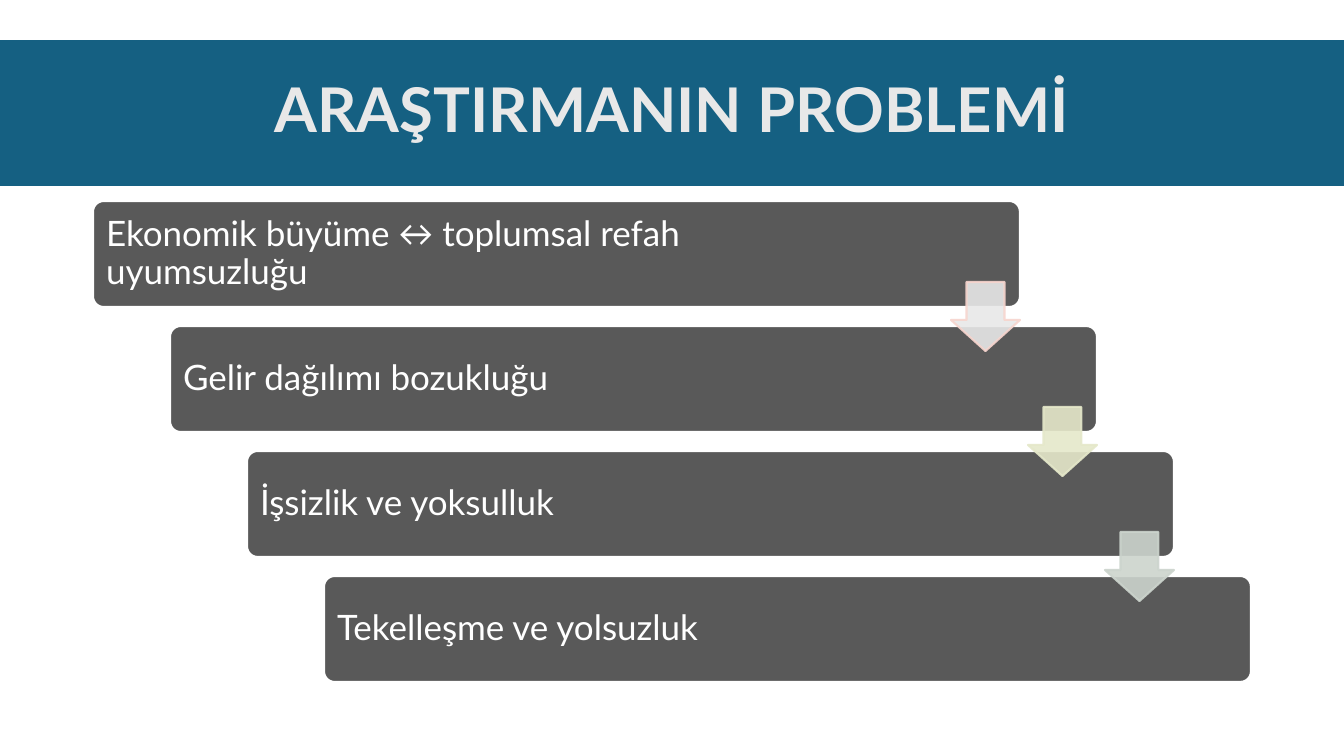
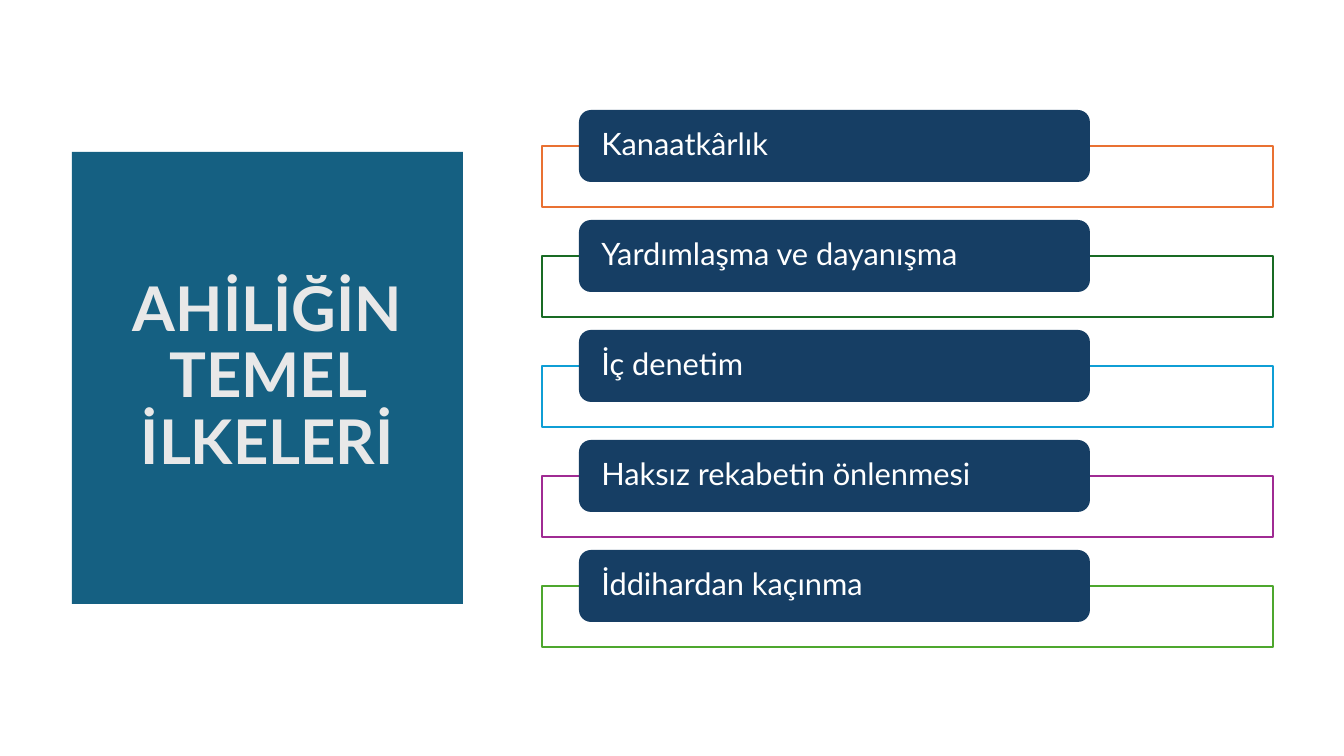
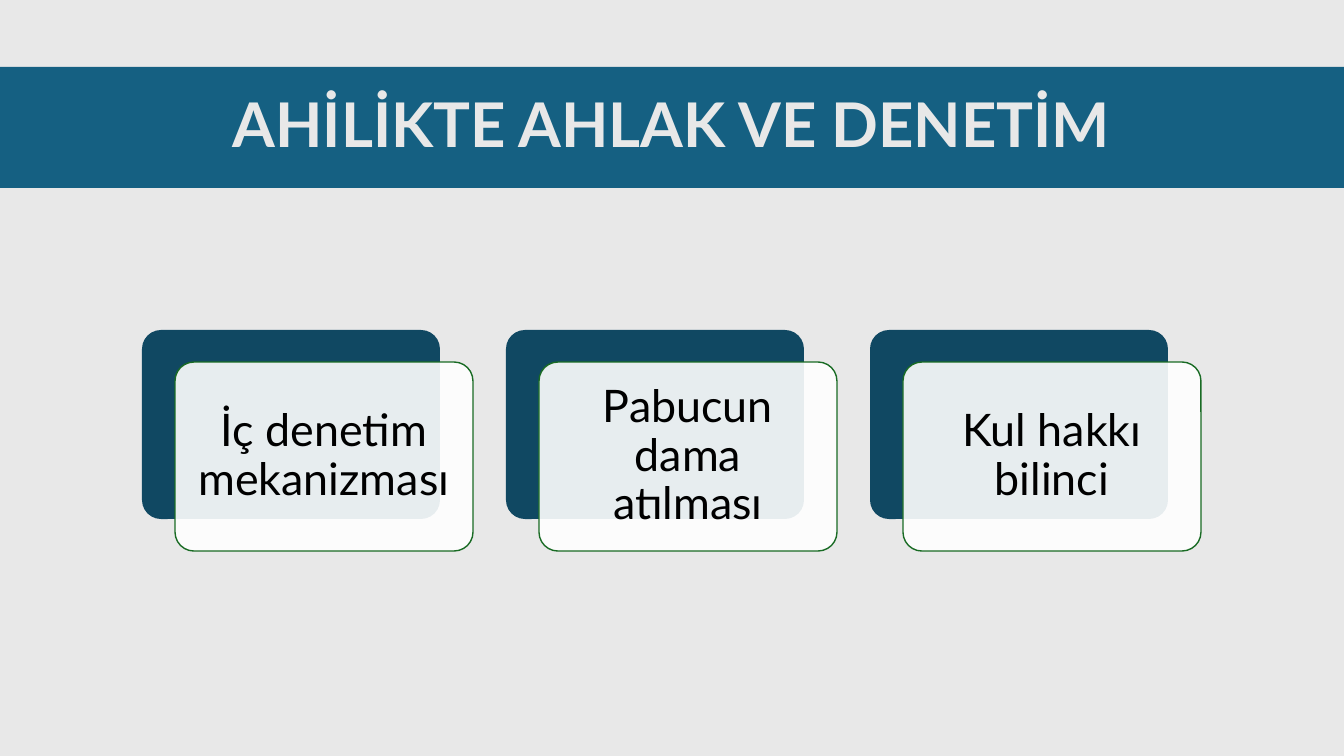
from pptx import Presentation
from pptx.dml.color import RGBColor
from pptx.enum.shapes import MSO_SHAPE
from pptx.enum.text import MSO_ANCHOR, PP_ALIGN
from pptx.oxml.ns import qn
from pptx.util import Emu, Pt
from lxml.etree import SubElement

EMU_PER_PX = 914400 / 100.8
SLIDE_WIDTH, SLIDE_HEIGHT = 1344, 756
FONT = "Lato"

WHITE = RGBColor(0xFF, 0xFF, 0xFF)
BLACK = RGBColor(0x00, 0x00, 0x00)
PALE_GRAY = RGBColor(0xE8, 0xE8, 0xE8)
DARK_GRAY = RGBColor(0x59, 0x59, 0x59)
TEAL = RGBColor(0x15, 0x60, 0x82)
DEEP_TEAL = RGBColor(0x10, 0x48, 0x62)
NAVY = RGBColor(0x16, 0x3E, 0x64)
ORANGE = RGBColor(0xE9, 0x71, 0x32)
GREEN = RGBColor(0x19, 0x6B, 0x24)
BLUE = RGBColor(0x0F, 0x9E, 0xD5)
PURPLE = RGBColor(0xA0, 0x2B, 0x93)
LIGHT_GREEN = RGBColor(0x4E, 0xA7, 0x2E)
PINK = RGBColor(0xF7, 0xD5, 0xCE)
PALE_OLIVE = RGBColor(0xE5, 0xE8, 0xCA)
PALE_SAGE = RGBColor(0xCC, 0xD4, 0xCD)


def px(length):
    return Emu(round(length * EMU_PER_PX))


def set_opacity(fill_parent, percent):
    color = fill_parent.find(qn("a:solidFill")).find(qn("a:srgbClr"))
    SubElement(color, qn("a:alpha")).set("val", str(percent * 1000))


def add_box(slide, kind, box, fill, line=None, line_width=1, adjustments=(),
            fill_opacity=100, line_opacity=100):
    shape = slide.shapes.add_shape(kind, *(px(length) for length in box))
    shape.shadow.inherit = False
    for index, value in enumerate(adjustments):
        shape.adjustments[index] = value
    shape.fill.solid()
    shape.fill.fore_color.rgb = fill
    if fill_opacity < 100:
        set_opacity(shape.element.spPr, fill_opacity)
    if line is None:
        shape.line.fill.background()
    else:
        shape.line.color.rgb = line
        shape.line.width = Pt(line_width)
        if line_opacity < 100:
            set_opacity(shape.element.spPr.find(qn("a:ln")), line_opacity)
    return shape


def write_text(shape, text, size, color, bold=False, align=PP_ALIGN.LEFT,
               margins=(10, 5, 10, 5)):
    frame = shape.text_frame
    frame.word_wrap = True
    frame.vertical_anchor = MSO_ANCHOR.MIDDLE
    frame.margin_left, frame.margin_top, frame.margin_right, frame.margin_bottom = (
        px(margin) for margin in margins)
    paragraph = frame.paragraphs[0]
    paragraph.alignment = align
    paragraph.line_spacing = 0.9
    run = paragraph.add_run()
    run.text = text
    run.font.name = FONT
    run.font.size = Pt(size)
    run.font.bold = bold
    run.font.color.rgb = color


def add_slide(presentation, background, title, title_box):
    slide = presentation.slides.add_slide(presentation.slide_layouts[6])
    slide.background.fill.solid()
    slide.background.fill.fore_color.rgb = background
    band = add_box(slide, MSO_SHAPE.RECTANGLE, title_box, TEAL)
    write_text(band, title, 44, PALE_GRAY, bold=True, align=PP_ALIGN.CENTER)
    return slide


def add_staircase(slide, left, top, steps, arrow_colors):
    width, height = 927, 106
    step_x, step_y = 77, 125
    arrow_size, arrow_drop = 69, 81
    # Steps
    for index, text in enumerate(steps):
        box = (left + index * step_x, top + index * step_y, width, height)
        step = add_box(slide, MSO_SHAPE.ROUNDED_RECTANGLE, box, DARK_GRAY,
                       line=WHITE, line_width=1.5, adjustments=(0.1,))
        write_text(step, text, 25, WHITE, margins=(10, 10, 130, 10))
    # Arrows, flush with the right edge of the step they leave
    for index, (fill, line) in enumerate(arrow_colors):
        box = (left + index * step_x + width - arrow_size,
               top + index * step_y + arrow_drop, arrow_size, arrow_size)
        add_box(slide, MSO_SHAPE.DOWN_ARROW, box, fill, line=line, line_width=1.5,
                adjustments=(0.55, 0.45), fill_opacity=90, line_opacity=90)


def add_principles(slide, left, top, principles):
    row_pitch = 110
    for index, (text, color) in enumerate(principles):
        row_top = top + index * row_pitch
        # Outlined frame behind the label
        add_box(slide, MSO_SHAPE.RECTANGLE, (left, row_top + 36, 731, 61), WHITE,
                line=color, fill_opacity=90)
        label = add_box(slide, MSO_SHAPE.ROUNDED_RECTANGLE,
                        (left + 37, row_top, 511, 72), NAVY)
        write_text(label, text, 22, WHITE, margins=(19, 0, 19, 0))


def add_cards(slide, left, top, texts):
    width, height, pitch = 298, 189, 364
    offset_x, offset_y = 33, 32
    for index, text in enumerate(texts):
        card_left = left + index * pitch
        # Dark backing, then the translucent card
        add_box(slide, MSO_SHAPE.ROUNDED_RECTANGLE, (card_left, top, width, height),
                DEEP_TEAL, adjustments=(0.1,))
        card = add_box(slide, MSO_SHAPE.ROUNDED_RECTANGLE,
                       (card_left + offset_x, top + offset_y, width, height), WHITE,
                       line=GREEN, adjustments=(0.1,), fill_opacity=90)
        write_text(card, text, 32, BLACK, align=PP_ALIGN.CENTER,
                   margins=(12, 12, 12, 12))


def main():
    presentation = Presentation()
    presentation.slide_width = px(SLIDE_WIDTH)
    presentation.slide_height = px(SLIDE_HEIGHT)

    # Research problem
    slide = add_slide(presentation, WHITE, "ARAŞTIRMANIN PROBLEMİ",
                      (0, 40, SLIDE_WIDTH, 146))
    add_staircase(slide, 93, 201, [
        "Ekonomik büyüme ↔ toplumsal refah uyumsuzluğu",
        "Gelir dağılımı bozukluğu",
        "İşsizlik ve yoksulluk",
        "Tekelleşme ve yolsuzluk",
    ], [(PALE_GRAY, PINK), (PALE_OLIVE, PALE_OLIVE), (PALE_SAGE, PALE_SAGE)])

    # Core principles
    slide = add_slide(presentation, WHITE, "AHİLİĞİN TEMEL İLKELERİ",
                      (72, 152, 391, 452))
    add_principles(slide, 542, 110, [
        ("Kanaatkârlık", ORANGE),
        ("Yardımlaşma ve dayanışma", GREEN),
        ("İç denetim", BLUE),
        ("Haksız rekabetin önlenmesi", PURPLE),
        ("İddihardan kaçınma", LIGHT_GREEN),
    ])

    # Ethics and oversight
    slide = add_slide(presentation, PALE_GRAY, "AHİLİKTE AHLAK VE DENETİM",
                      (0, 67, SLIDE_WIDTH, 121))
    add_cards(slide, 142, 330, [
        "İç denetim mekanizması",
        "Pabucun dama atılması",
        "Kul hakkı bilinci",
    ])

    presentation.save("out.pptx")


if __name__ == "__main__":
    main()
